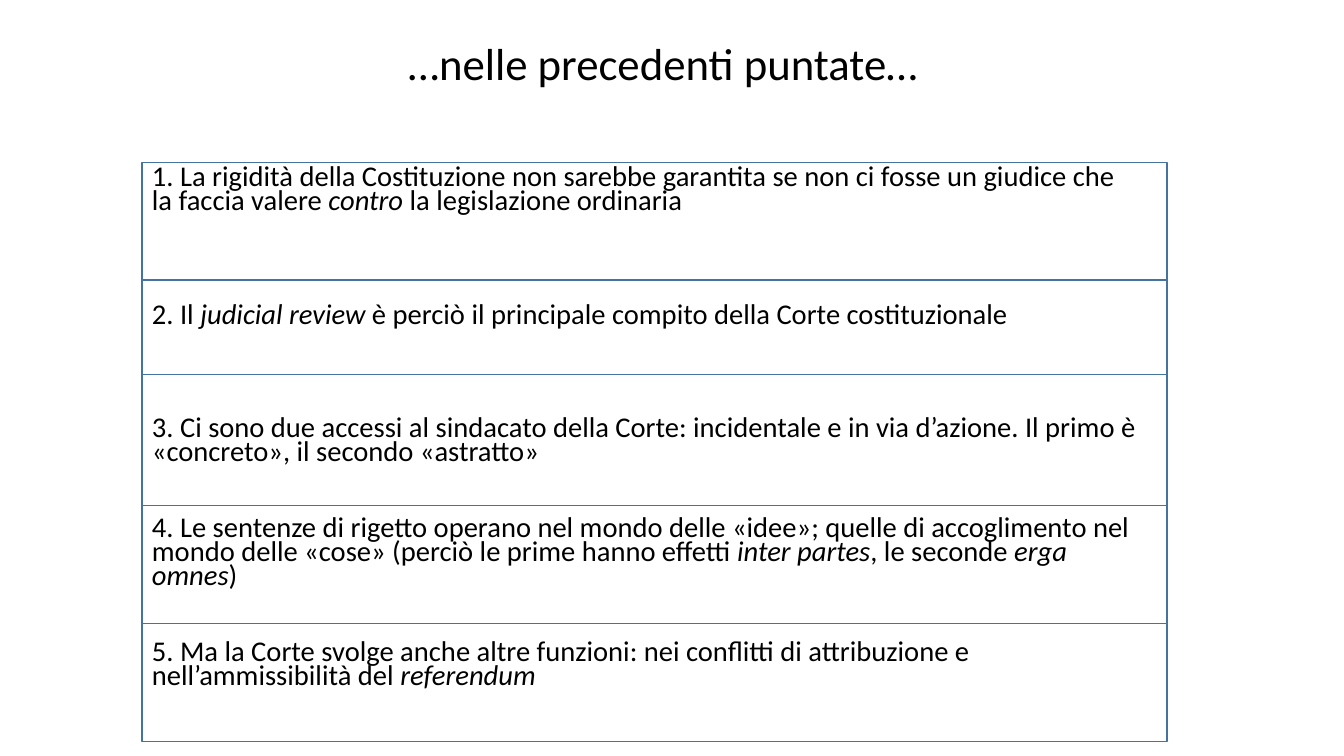
from pptx import Presentation
from pptx.dml.color import RGBColor
from pptx.enum.shapes import MSO_SHAPE
from pptx.enum.text import MSO_ANCHOR, MSO_AUTO_SIZE, PP_ALIGN
from pptx.util import Cm, Pt

RECTANGLE = MSO_SHAPE.RECTANGLE
TOP, BOTTOM = MSO_ANCHOR.TOP, MSO_ANCHOR.BOTTOM
LEFT, CENTER = PP_ALIGN.LEFT, PP_ALIGN.CENTER
NO_AUTOFIT = MSO_AUTO_SIZE.NONE

COLORS = {"text": "000000", "border": "43739E"}


def format_paragraph(paragraph, size, alignment, spacing):
    paragraph.alignment = alignment
    paragraph.line_spacing = spacing
    paragraph.font.name = "Calibri"
    paragraph.font.size = Pt(size)
    paragraph.font.color.rgb = RGBColor.from_string(COLORS["text"])


prs = Presentation()
prs.slide_width = Cm(33.87)
prs.slide_height = Cm(19.05)
slide = prs.slides.add_slide(prs.slide_layouts[5])

heading = slide.shapes.title
heading.left, heading.top = Cm(4.01), Cm(1.04)
heading.width, heading.height = Cm(25.4), Cm(1.37)
heading.text_frame.text = "…nelle precedenti puntate…"
heading.text_frame.auto_size = NO_AUTOFIT
heading.text_frame.vertical_anchor = BOTTOM
format_paragraph(heading.text_frame.paragraphs[0], 32, CENTER, 0.9)

points = [
    (2.97, 0.13, [
        ("1. La rigidità della Costituzione non sarebbe garantita se non ci fosse "
         "un giudice che la faccia valere ", False),
        ("contro", True),
        (" la legislazione ordinaria", False),
    ]),
    (2.38, 0.63, [
        ("2. Il ", False),
        ("judicial review", True),
        (" è perciò il principale compito della Corte costituzionale", False),
    ]),
    (3.3, 1.09, [
        ("3. Ci sono due accessi al sindacato della Corte: incidentale e in via "
         "d’azione. Il primo è «concreto», il secondo «astratto»", False),
    ]),
    (2.97, 0.33, [
        ("4. Le sentenze di rigetto operano nel mondo delle «idee»; quelle di "
         "accoglimento nel mondo delle «cose» (perciò le prime hanno effetti ", False),
        ("inter partes", True),
        (", le seconde ", False),
        ("erga omnes", True),
        (")", False),
    ]),
    (2.97, 0.48, [
        ("5. Ma la Corte svolge anche altre funzioni: nei conflitti di attribuzione "
         "e nell’ammissibilità del ", False),
        ("referendum", True),
    ]),
]

point_top = 4.09
for height, inset, phrases in points:
    point = slide.shapes.add_shape(
        RECTANGLE, Cm(3.58), Cm(point_top), Cm(25.83), Cm(height))
    point.shadow.inherit = False
    point.fill.background()
    point.line.color.rgb = RGBColor.from_string(COLORS["border"])
    point.line.width = Pt(1)

    frame = point.text_frame
    frame.word_wrap = True
    frame.vertical_anchor = TOP
    frame.margin_left, frame.margin_right = Cm(0.25), Cm(0.68)
    frame.margin_top, frame.margin_bottom = Cm(inset), Cm(0.13)
    paragraph = frame.paragraphs[0]
    format_paragraph(paragraph, 20.4, LEFT, 0.7)
    for phrase, italic in phrases:
        run = paragraph.add_run()
        run.text = phrase
        if italic:
            run.font.italic = True
    point_top += height

prs.save("out.pptx")
